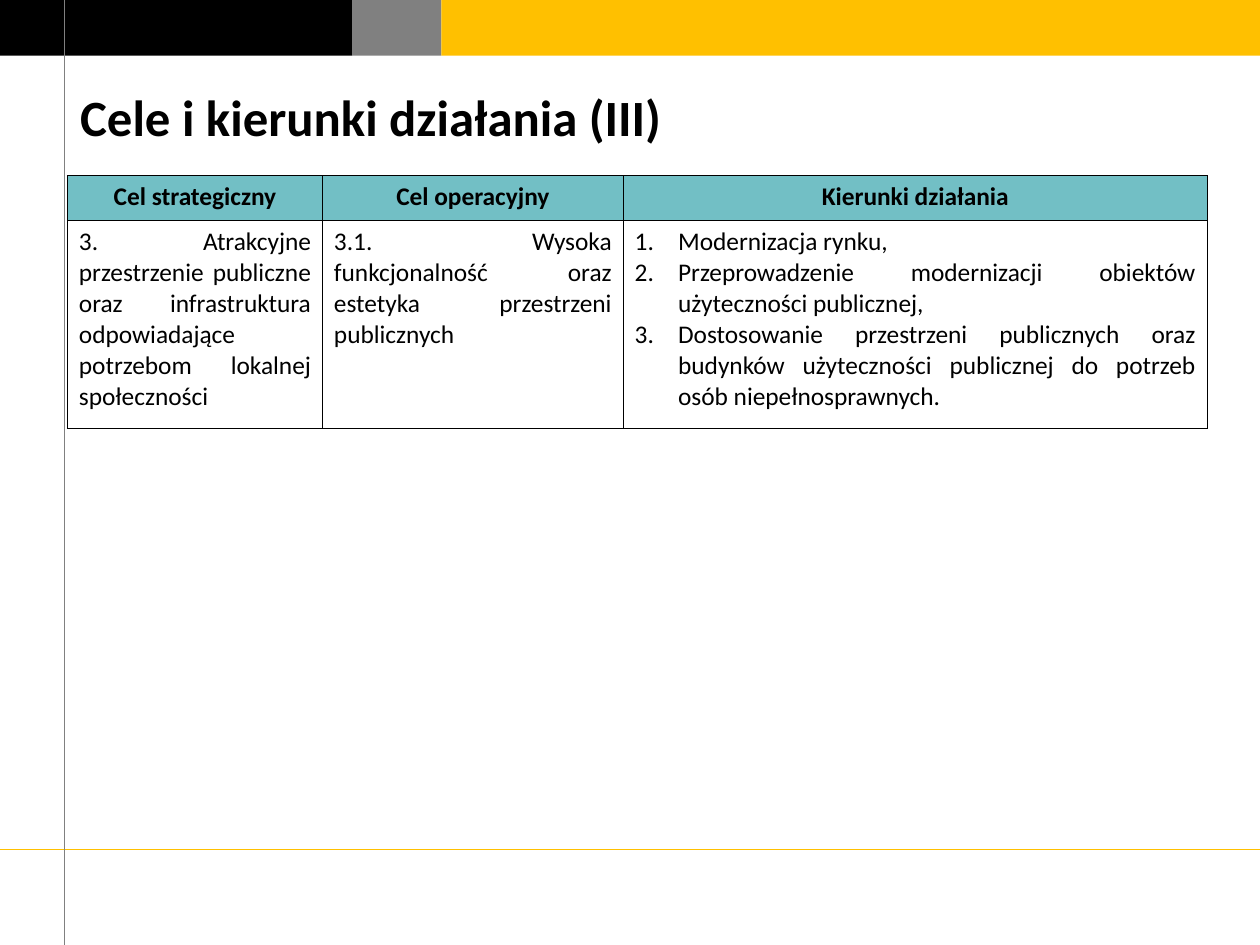
from dataclasses import dataclass

import lxml.etree
import pptx
import pptx.dml.color
import pptx.enum.shapes
import pptx.enum.text
import pptx.oxml.ns
import pptx.util

RGBColor = pptx.dml.color.RGBColor
Align = pptx.enum.text.PP_ALIGN

BLACK = RGBColor(0x00, 0x00, 0x00)
WHITE = RGBColor(0xFF, 0xFF, 0xFF)
GREY = RGBColor(0x80, 0x80, 0x80)
AMBER = RGBColor(0xFF, 0xC0, 0x00)
TEAL = RGBColor(0x72, 0xBF, 0xC5)

FONT = "Calibri"
SLIDE_WIDTH = pptx.util.Cm(28)
SLIDE_HEIGHT = pptx.util.Cm(21)

# Shares of the slide's width and height, in percent
BAND_HEIGHT = 5.9
CONTENT_LEFT = 5.36
TITLE_WIDTH = 90.4
TITLE_HEIGHT = 12.7
TABLE_TOP = 18.6
COLUMN_WIDTHS = (20.24, 23.87, 46.35)
ROW_HEIGHTS = (4.72, 22.01)


@dataclass
class Band:
    left: float
    right: float
    color: RGBColor


@dataclass
class Rule:
    begin: tuple[float, float]
    end: tuple[float, float]
    color: RGBColor


@dataclass
class Cell:
    paragraphs: list[str]
    header: bool = False
    numbered: bool = False


BANDS = [
    Band(0, 27.95, BLACK),
    Band(27.95, 35.03, GREY),
    Band(35.03, 100, AMBER),
]
RULES = [
    Rule((0, 89.87), (100, 89.87), AMBER),
    Rule((5.11, 100), (5.11, 0), GREY),
]
ROWS = [
    [
        Cell(["Cel strategiczny"], header=True),
        Cell(["Cel operacyjny"], header=True),
        Cell(["Kierunki działania"], header=True),
    ],
    [
        Cell(["3. Atrakcyjne przestrzenie publiczne oraz infrastruktura "
              "odpowiadające potrzebom lokalnej społeczności"]),
        Cell(["3.1. Wysoka funkcjonalność oraz estetyka przestrzeni publicznych"]),
        Cell([
            "Modernizacja rynku,",
            "Przeprowadzenie modernizacji obiektów użyteczności publicznej,",
            "Dostosowanie przestrzeni publicznych oraz budynków użyteczności "
            "publicznej do potrzeb osób niepełnosprawnych.",
        ], numbered=True),
    ],
]


def across(percent: float) -> int:
    return round(SLIDE_WIDTH * percent / 100)


def down(percent: float) -> int:
    return round(SLIDE_HEIGHT * percent / 100)


def add_child(parent, tag: str, **attributes: str):
    return lxml.etree.SubElement(parent, pptx.oxml.ns.qn(tag), attributes)


def draw_band(slide, band: Band) -> None:
    shape = slide.shapes.add_shape(
        pptx.enum.shapes.MSO_SHAPE.RECTANGLE,
        across(band.left), 0, across(band.right - band.left), down(BAND_HEIGHT))
    shape.shadow.inherit = False
    shape.fill.solid()
    shape.fill.fore_color.rgb = band.color
    shape.line.fill.background()


def draw_rule(slide, rule: Rule) -> None:
    connector = slide.shapes.add_connector(
        pptx.enum.shapes.MSO_CONNECTOR.STRAIGHT,
        across(rule.begin[0]), down(rule.begin[1]),
        across(rule.end[0]), down(rule.end[1]))
    connector.line.color.rgb = rule.color
    connector.line.width = pptx.util.Pt(0.75)
    add_child(connector._element.spPr, "a:effectLst")


def write_run(paragraph, text: str, size: float, bold: bool) -> None:
    run = paragraph.add_run()
    run.text = text
    run.font.name = FONT
    run.font.size = pptx.util.Pt(size)
    run.font.bold = bold
    run.font.color.rgb = BLACK


def number_paragraph(paragraph) -> None:
    indent = pptx.util.Inches(0.38)
    properties = paragraph._p.get_or_add_pPr()
    properties.set("marL", str(indent))
    properties.set("indent", str(-indent))
    add_child(properties, "a:buFont", typeface="+mj-lt")
    add_child(properties, "a:buAutoNum", type="arabicPeriod")


def draw_borders(table_cell) -> None:
    properties = table_cell._tc.get_or_add_tcPr()
    for position, side in enumerate(("a:lnL", "a:lnR", "a:lnT", "a:lnB")):
        border = add_child(properties, side, w=str(pptx.util.Pt(1)))
        add_child(add_child(border, "a:solidFill"), "a:srgbClr", val=str(BLACK))
        properties.insert(position, border)


def fill_cell(table_cell, cell: Cell) -> None:
    table_cell.fill.solid()
    table_cell.fill.fore_color.rgb = TEAL if cell.header else WHITE
    draw_borders(table_cell)
    frame = table_cell.text_frame
    for index, text in enumerate(cell.paragraphs):
        paragraph = frame.add_paragraph() if index else frame.paragraphs[0]
        paragraph.alignment = Align.CENTER if cell.header else Align.JUSTIFY
        if cell.numbered:
            number_paragraph(paragraph)
        write_run(paragraph, text, 16, cell.header)


def write_title(slide, text: str) -> None:
    title = slide.shapes.title
    title.left, title.top = across(CONTENT_LEFT), down(BAND_HEIGHT)
    title.width, title.height = across(TITLE_WIDTH), down(TITLE_HEIGHT)
    frame = title.text_frame
    frame.word_wrap = True
    frame.auto_size = pptx.enum.text.MSO_AUTO_SIZE.NONE
    frame.vertical_anchor = pptx.enum.text.MSO_ANCHOR.MIDDLE
    frame.margin_left = frame.margin_right = pptx.util.Inches(0.11)
    frame.margin_top = frame.margin_bottom = pptx.util.Inches(0.06)
    frame.paragraphs[0].alignment = Align.JUSTIFY
    write_run(frame.paragraphs[0], text, 32, True)


def draw_table(slide) -> None:
    table = slide.shapes.add_table(
        len(ROWS), len(COLUMN_WIDTHS), across(CONTENT_LEFT), down(TABLE_TOP),
        across(sum(COLUMN_WIDTHS)), down(sum(ROW_HEIGHTS))).table
    table.horz_banding = False
    for column, width in zip(table.columns, COLUMN_WIDTHS):
        column.width = across(width)
    for row, height, cells in zip(table.rows, ROW_HEIGHTS, ROWS):
        row.height = down(height)
        for table_cell, cell in zip(row.cells, cells):
            fill_cell(table_cell, cell)


def main() -> None:
    presentation = pptx.Presentation()
    presentation.slide_width = SLIDE_WIDTH
    presentation.slide_height = SLIDE_HEIGHT
    slide = presentation.slides.add_slide(presentation.slide_layouts[5])

    # Frame of the page
    for band in BANDS:
        draw_band(slide, band)
    for rule in RULES:
        draw_rule(slide, rule)

    # Content
    write_title(slide, "Cele i kierunki działania (III)")
    draw_table(slide)
    presentation.save("out.pptx")


if __name__ == "__main__":
    main()
